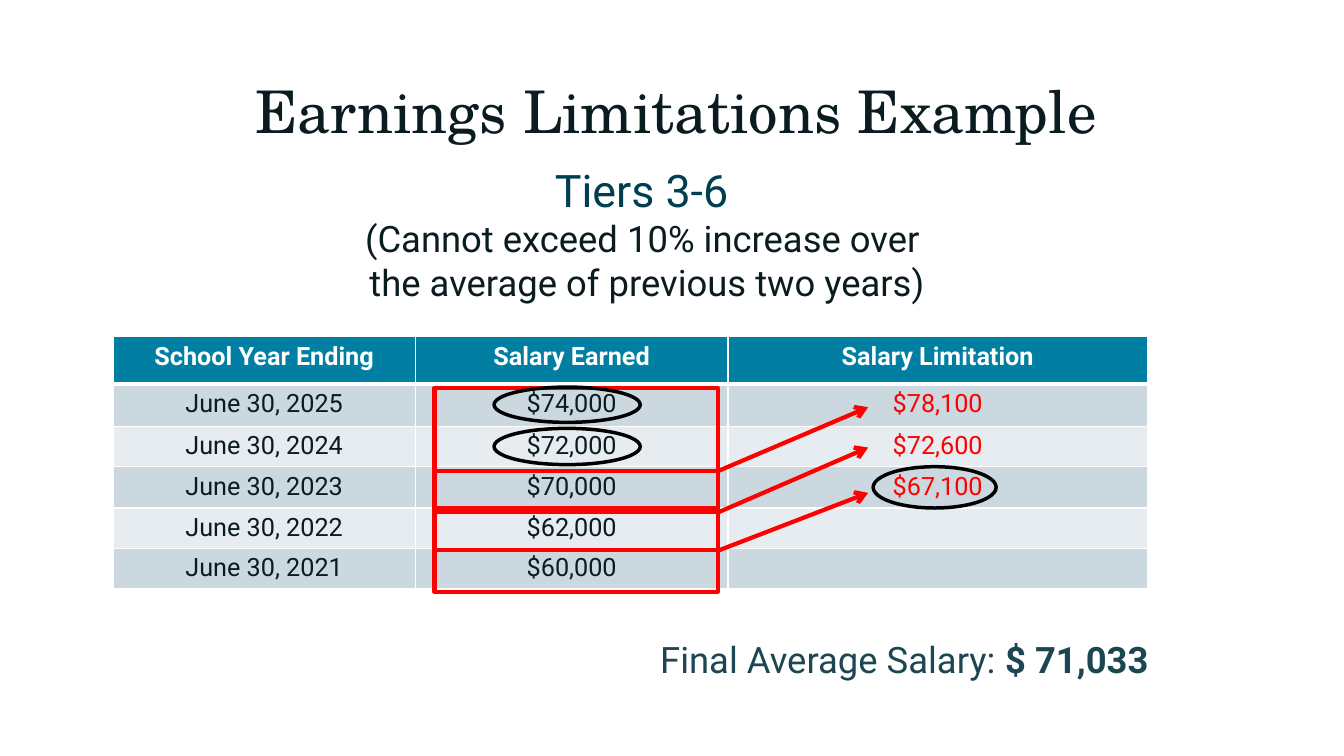
from dataclasses import dataclass

from lxml.etree import SubElement
from pptx import Presentation
from pptx.dml.color import RGBColor
from pptx.enum.shapes import MSO_CONNECTOR, MSO_SHAPE
from pptx.enum.text import MSO_ANCHOR, PP_ALIGN
from pptx.oxml.ns import qn
from pptx.util import Inches, Pt


@dataclass(frozen=True)
class Theme:
    heading_font: str = "TeX Gyre Schola"
    body_font: str = "Roboto"
    ink: str = "0B1C21"
    tiers: str = "003E51"
    average: str = "1C4652"
    header: str = "007FA3"
    odd_row: str = "CCD8E0"
    even_row: str = "E7ECF0"
    white: str = "FFFFFF"
    red: str = "FF0000"
    black: str = "000000"
    title_size: int = 42
    tiers_size: int = 32
    text_size: int = 26
    table_size: int = 18


@dataclass(frozen=True)
class SalaryWindow:
    top: float
    height: float
    arrow_start: float
    arrow_end: float


@dataclass(frozen=True)
class Oval:
    left: float
    top: float
    width: float
    height: float


THEME = Theme()
SALARIES = [
    ("School Year Ending", "Salary Earned", "Salary Limitation"),
    ("June 30, 2025", "$74,000", "$78,100"),
    ("June 30, 2024", "$72,000", "$72,600"),
    ("June 30, 2023", "$70,000", "$67,100"),
    ("June 30, 2022", "$62,000", ""),
    ("June 30, 2021", "$60,000", ""),
]
COLUMN_WIDTHS = [3, 3.1, 4.16]
ROW_HEIGHTS = [0.47, 0.42, 0.38, 0.41, 0.35, 0.4]
WINDOWS = [
    SalaryWindow(5.08, 0.79, 5.46, 4.89),
    SalaryWindow(4.67, 0.79, 5.08, 4.44),
    SalaryWindow(3.85, 1.19, 4.67, 4.04),
]
OVALS = [
    Oval(8.66, 4.63, 1.22, 0.41),
    Oval(4.9, 4.25, 1.45, 0.36),
    Oval(4.9, 3.84, 1.45, 0.35),
]


def color(value: str) -> RGBColor:
    return RGBColor.from_string(value)


def write(paragraph, text: str, *, size: float, ink: str = THEME.ink,
          font: str = THEME.body_font, bold: bool = False, align=PP_ALIGN.CENTER) -> None:
    paragraph.alignment = align
    run = paragraph.add_run()
    run.text = text
    run.font.size = Pt(size)
    run.font.name = font
    run.font.bold = bold
    run.font.color.rgb = color(ink)


def clear_margins(frame) -> None:
    frame.margin_left = frame.margin_right = frame.margin_top = frame.margin_bottom = 0


def add_title(slide) -> None:
    title = slide.shapes.title
    title.left, title.top = Inches(1.15), Inches(0.2)
    title.width, title.height = Inches(11.11), Inches(1.25)
    frame = title.text_frame
    clear_margins(frame)
    frame.vertical_anchor = MSO_ANCHOR.BOTTOM
    heading = frame.paragraphs[0]
    heading.line_spacing = 0.9
    write(heading, "Earnings Limitations Example", size=THEME.title_size,
          font=THEME.heading_font)


def add_rule(slide) -> None:
    box = slide.shapes.add_textbox(Inches(0.78), Inches(1.61), Inches(11.11), Inches(1.5))
    frame = box.text_frame
    frame.word_wrap = True
    clear_margins(frame)
    opening, ending = frame.paragraphs[0], frame.add_paragraph()
    for paragraph in (opening, ending):
        paragraph._p.get_or_add_pPr().set("marL", str(Inches(0.17)))
    write(opening, "Tiers 3-6 ", size=THEME.tiers_size, ink=THEME.tiers)
    opening.add_line_break()
    write(opening, "(Cannot exceed 10% increase over ", size=THEME.text_size)
    write(ending, "the average of previous two years)", size=THEME.text_size)


def set_borders(cell, bottom_width: float) -> None:
    properties = cell._tc.get_or_add_tcPr()
    widths = {"a:lnL": 1, "a:lnR": 1, "a:lnT": 1, "a:lnB": bottom_width}
    for position, (side, width) in enumerate(widths.items()):
        border = properties.makeelement(qn(side), {"w": str(Pt(width))})
        fill = SubElement(border, qn("a:solidFill"))
        SubElement(fill, qn("a:srgbClr"), val=THEME.white)
        properties.insert(position, border)


def add_salary_table(slide) -> None:
    table = slide.shapes.add_table(
        len(SALARIES), len(COLUMN_WIDTHS), Inches(1.12), Inches(3.34),
        Inches(sum(COLUMN_WIDTHS)), Inches(sum(ROW_HEIGHTS))).table
    for column, width in zip(table.columns, COLUMN_WIDTHS):
        column.width = Inches(width)
    for row, height in zip(table.rows, ROW_HEIGHTS):
        row.height = Inches(height)
    for row, values in enumerate(SALARIES):
        is_header = row == 0
        band = THEME.header if is_header else (THEME.odd_row if row % 2 else THEME.even_row)
        inks = [THEME.white] * 3 if is_header else [THEME.ink, THEME.ink, THEME.red]
        for column, (value, ink) in enumerate(zip(values, inks)):
            cell = table.cell(row, column)
            cell.fill.solid()
            cell.fill.fore_color.rgb = color(band)
            set_borders(cell, 3 if row == 0 else 1)
            if row and column == 0:
                cell.margin_left = cell.margin_right = Inches(0.13)
            if value:
                write(cell.text_frame.paragraphs[0], value, size=THEME.table_size,
                      ink=ink, bold=is_header)


def add_outline(slide, kind, left: float, top: float, width: float, height: float,
                ink: str, weight: float) -> None:
    outline = slide.shapes.add_shape(kind, Inches(left), Inches(top),
                                     Inches(width), Inches(height))
    outline.shadow.inherit = False
    outline.fill.background()
    outline.line.color.rgb = color(ink)
    outline.line.width = Pt(weight)


def add_window(slide, window: SalaryWindow) -> None:
    add_outline(slide, MSO_SHAPE.RECTANGLE, 4.31, window.top, 2.81, window.height,
                THEME.red, 3)
    arrow = slide.shapes.add_connector(
        MSO_CONNECTOR.STRAIGHT, Inches(7.13), Inches(window.arrow_start),
        Inches(8.61), Inches(window.arrow_end))
    arrow.line.color.rgb = color(THEME.red)
    arrow.line.width = Pt(3)
    SubElement(arrow.line._get_or_add_ln(), qn("a:tailEnd"), type="arrow")
    SubElement(arrow._element.spPr, qn("a:effectLst"))


def add_average(slide) -> None:
    box = slide.shapes.add_textbox(Inches(6.45), Inches(6.27), Inches(5.33), Inches(0.54))
    box.text_frame.word_wrap = True
    average = box.text_frame.paragraphs[0]
    for text, bold in (("Final Average Salary: ", False), ("$ 71,033", True)):
        write(average, text, size=THEME.text_size, ink=THEME.average, bold=bold,
              align=PP_ALIGN.LEFT)


def main() -> None:
    deck = Presentation()
    deck.slide_width, deck.slide_height = Inches(13.33), Inches(7.5)
    slide = deck.slides.add_slide(deck.slide_layouts[5])
    add_title(slide)
    add_rule(slide)
    add_salary_table(slide)
    for window in WINDOWS:
        add_window(slide, window)
    for oval in OVALS:
        add_outline(slide, MSO_SHAPE.OVAL, oval.left, oval.top, oval.width, oval.height,
                    THEME.black, 2.5)
    add_average(slide)
    deck.save("out.pptx")


if __name__ == "__main__":
    main()
